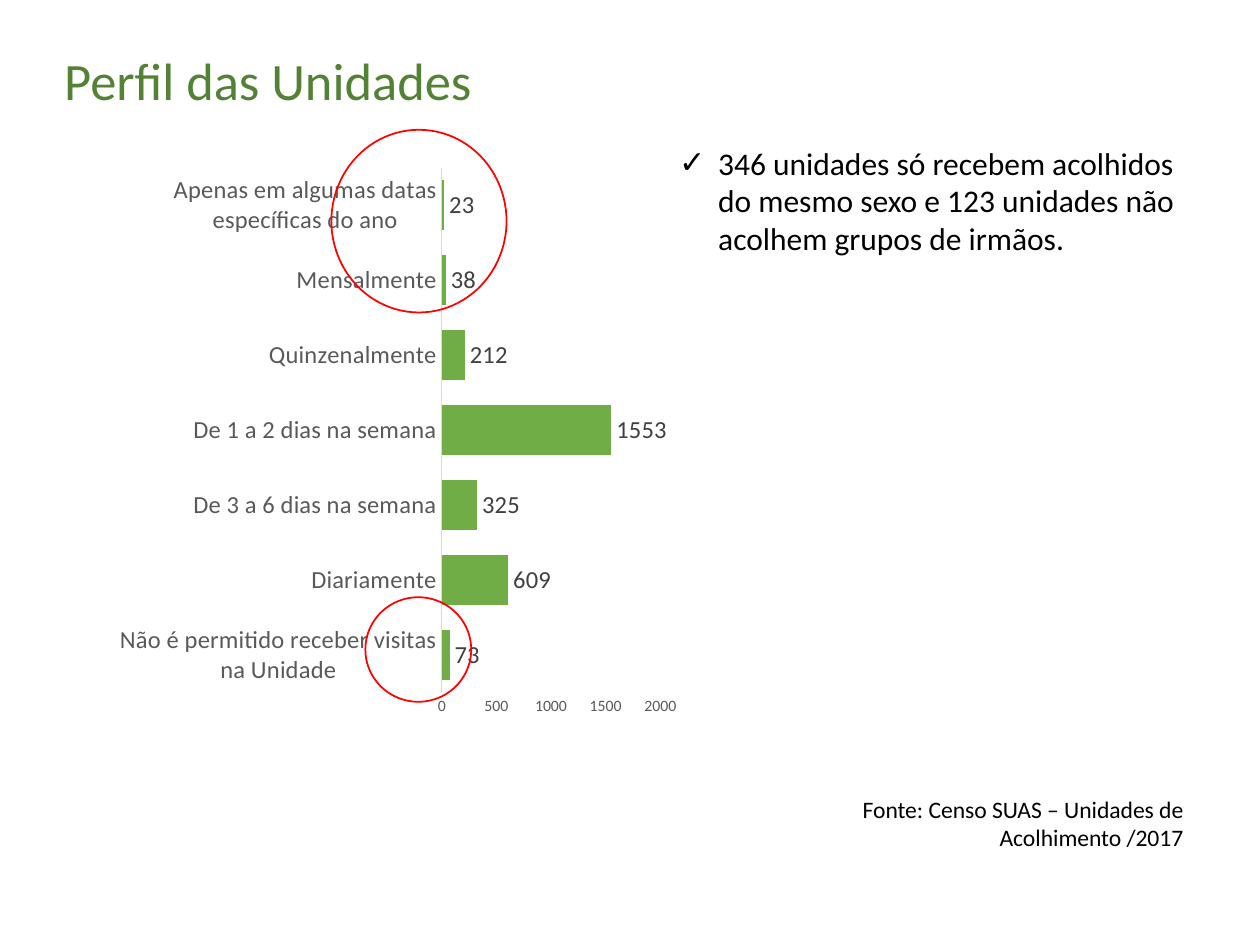
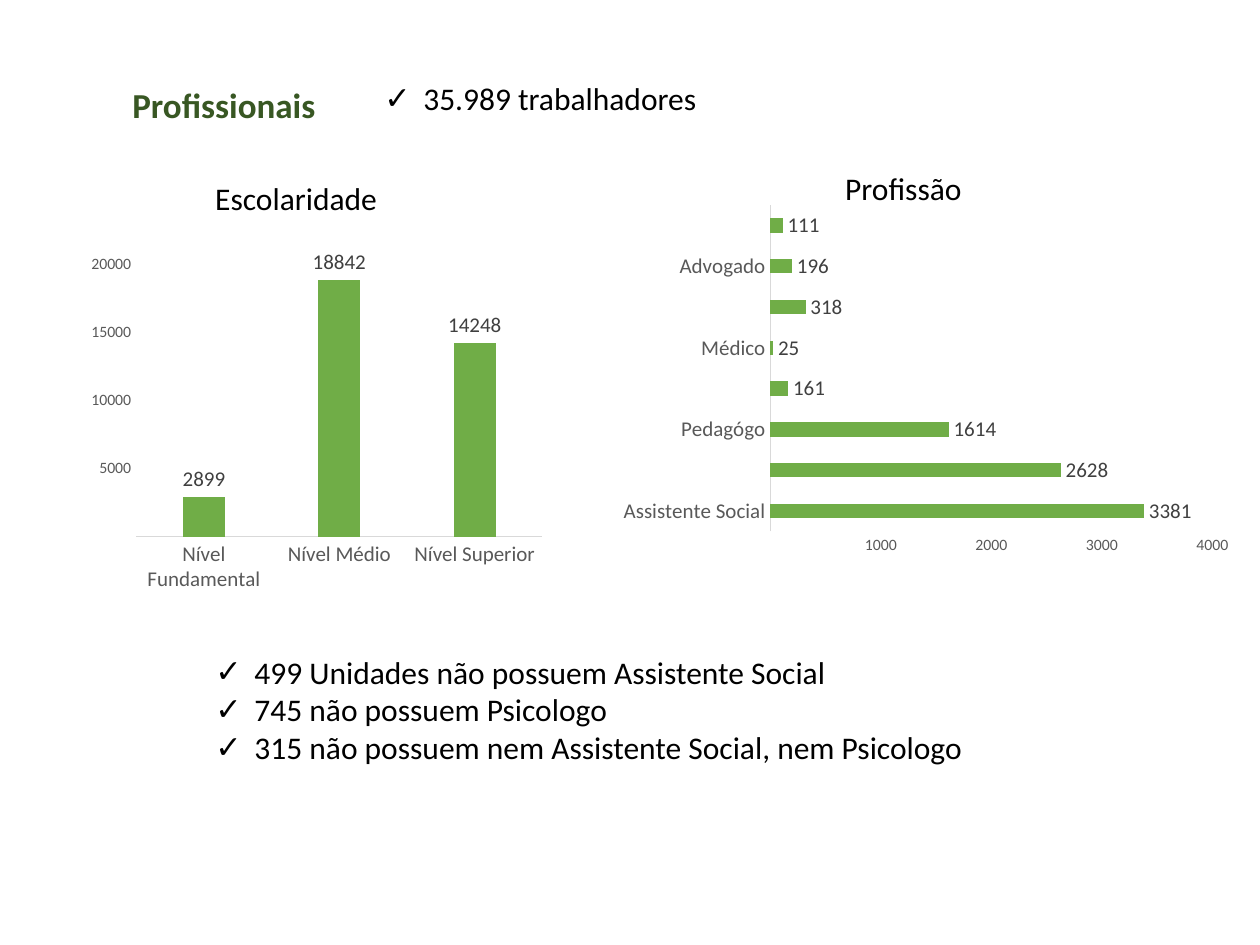
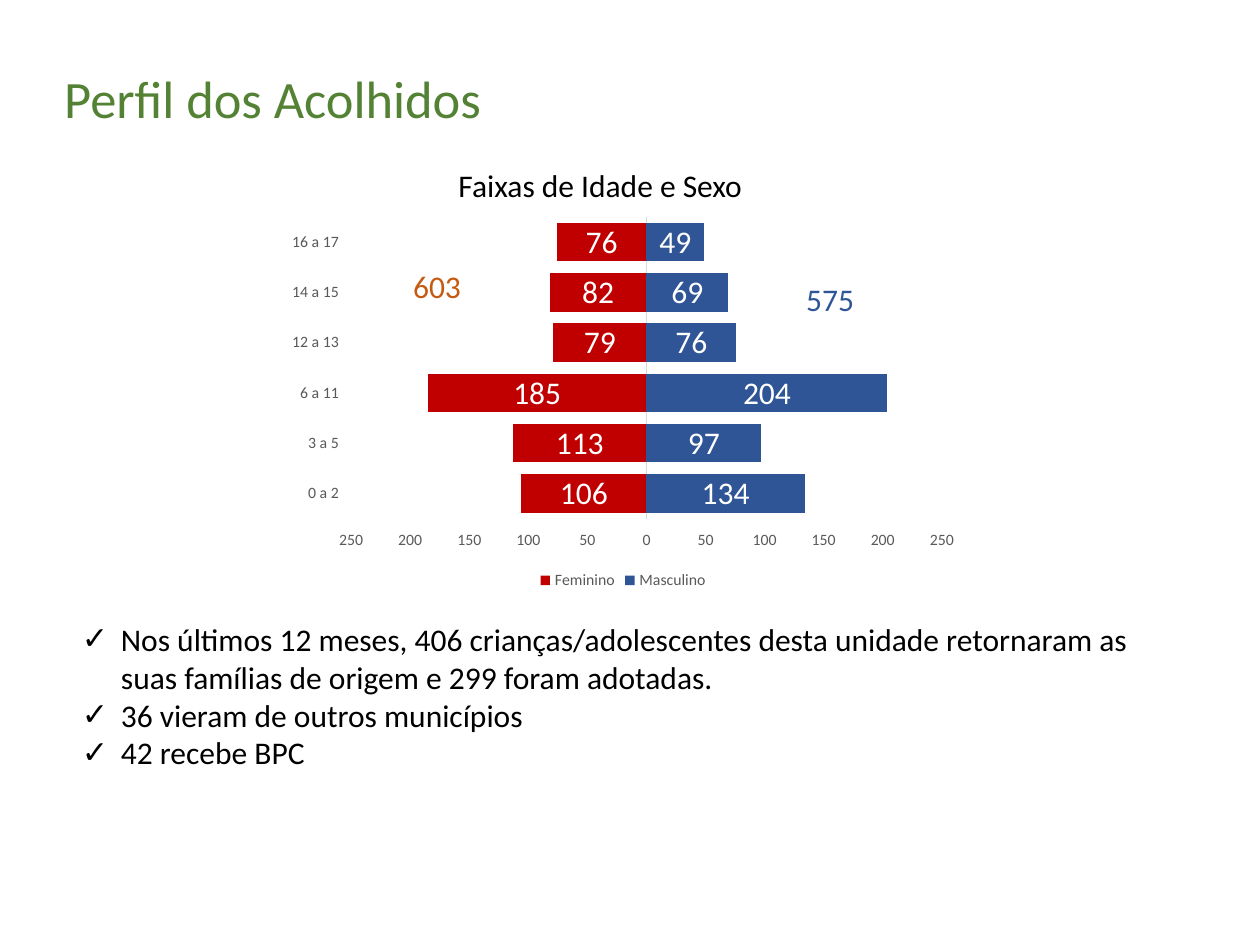
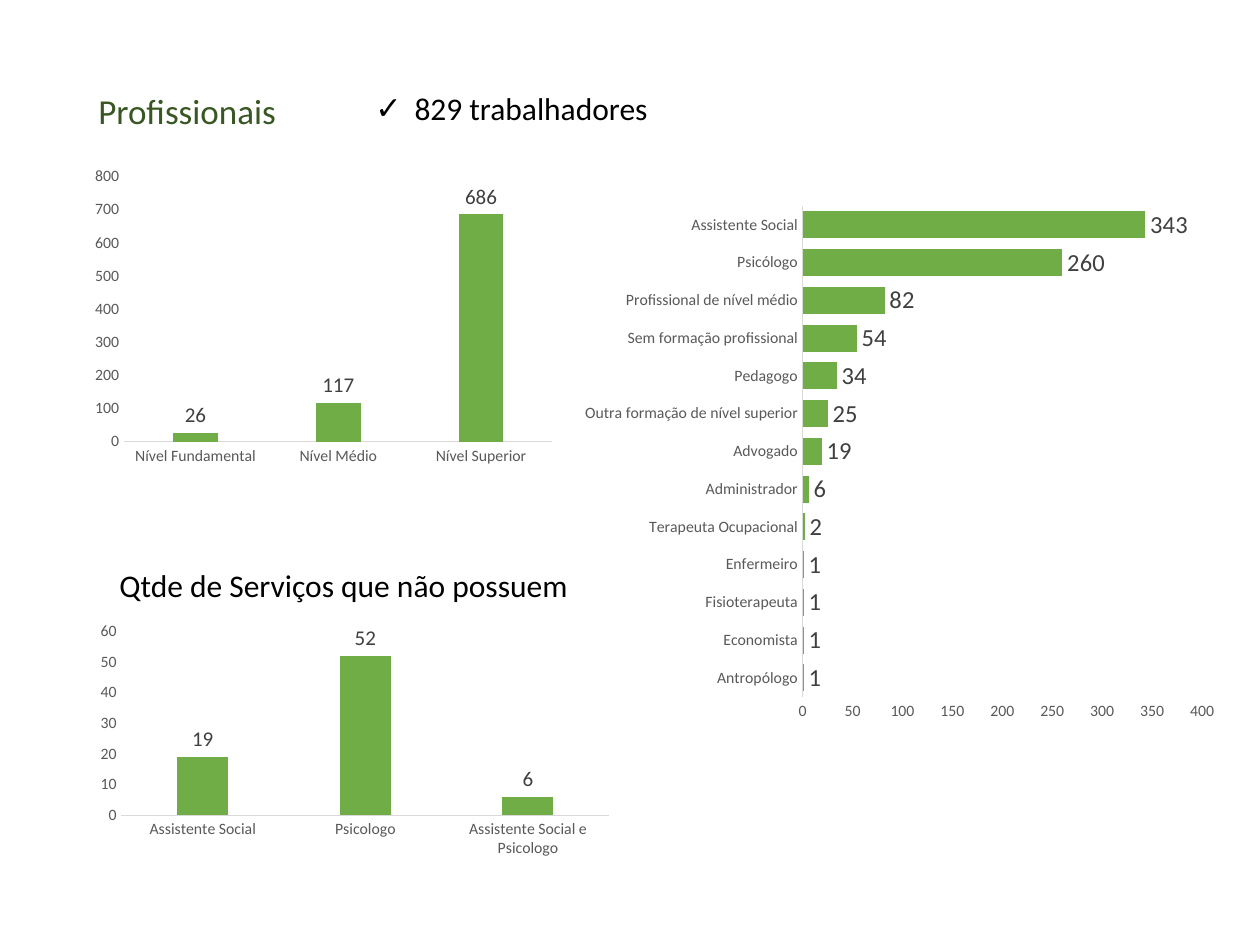
import pptx
import pptx.chart.data
import pptx.dml.color
import pptx.enum.chart
import pptx.enum.shapes
import pptx.enum.text
import pptx.oxml
import pptx.oxml.ns
import pptx.util

PX = 9144  # 100 px to the inch
FONT = "Calibri"
COLORS = {
    "title": "548235", "section": "385723", "text": "000000",
    "axis": "595959", "axis_line": "D9D9D9", "label": "404040",
    "bar": "70AD47", "female": "C00000", "male": "2F5597",
    "female_total": "C55A11", "highlight": "FF0000", "white": "FFFFFF",
}
LIST_INDENT = 31
PLAIN_NUMBER = "###0"
ZERO_HIDDEN = "####"
UNSIGNED = "###0;###0"
CHART_TYPE = pptx.enum.chart.XL_CHART_TYPE
COLUMNS, BARS = CHART_TYPE.COLUMN_CLUSTERED, CHART_TYPE.BAR_CLUSTERED
LABEL_POSITION = pptx.enum.chart.XL_LABEL_POSITION


def rgb(name):
    return pptx.dml.color.RGBColor.from_string(COLORS[name])


def emu(box):
    return [pptx.util.Emu(length * PX) for length in box]


def style_font(font, size, color, bold=False):
    font.name = FONT
    font.size = pptx.util.Pt(size)
    font.bold = bold
    font.color.rgb = rgb(color)


def add_check_bullet(paragraph):
    properties = paragraph._p.get_or_add_pPr()
    properties.set("marL", str(LIST_INDENT * PX))
    properties.set("indent", str(-LIST_INDENT * PX))
    bullet = pptx.oxml.parse_xml(
        f'<a:buChar {pptx.oxml.ns.nsdecls("a")} char="✓"/>')
    properties.append(bullet)


def fill_text(shape, box, lines, size, color, bold=False, checks=False, align="LEFT"):
    shape.left, shape.top, shape.width, shape.height = emu(box)
    frame = shape.text_frame
    frame.text = "\n".join(lines)
    frame.word_wrap = True
    frame.auto_size = pptx.enum.text.MSO_AUTO_SIZE.SHAPE_TO_FIT_TEXT
    frame.vertical_anchor = pptx.enum.text.MSO_ANCHOR.TOP
    for paragraph in frame.paragraphs:
        paragraph.space_before = pptx.util.Pt(0)
        paragraph.alignment = getattr(pptx.enum.text.PP_ALIGN, align)
        if checks:
            add_check_bullet(paragraph)
        for run in paragraph.runs:
            style_font(run.font, size, color, bold)


def add_note(slide, box, text, size=18, color="text", align="LEFT"):
    note = slide.shapes.add_textbox(*emu(box))
    fill_text(note, box, [text], size, color, align=align)


def add_title(slide, box, text, size=30, color="title", bold=False):
    fill_text(slide.shapes.title, box, [text], size, color, bold)


def add_checklist(slide, box, lines, placeholder=1):
    fill_text(slide.placeholders[placeholder], box, lines, 18, "text", checks=True)


def add_chart(slide, box, kind, categories, series, value_range, gap, overlap=0,
              number_format=PLAIN_NUMBER, axis_size=9, label_size=12,
              label_color="label", position=LABEL_POSITION.OUTSIDE_END):
    """Add a chart; series holds (name, values, color), value_range (min, max, step)."""
    data = pptx.chart.data.CategoryChartData(number_format=number_format)
    data.categories = categories
    for name, values, _ in series:
        data.add_series(name, values)
    chart = slide.shapes.add_chart(kind, *emu(box), data).chart
    chart.has_title = False
    chart.has_legend = False
    style_font(chart.font, 10, "text")

    category_axis, value_axis = chart.category_axis, chart.value_axis
    for axis, size in ((category_axis, axis_size), (value_axis, 9)):
        axis.has_major_gridlines = False
        axis.major_tick_mark = pptx.enum.chart.XL_TICK_MARK.NONE
        style_font(axis.tick_labels.font, size, "axis")
    category_axis.format.line.color.rgb = rgb("axis_line")
    category_axis.format.line.width = pptx.util.Pt(0.75)
    value_axis.format.line.fill.background()
    value_axis.minimum_scale, value_axis.maximum_scale, value_axis.major_unit = value_range
    value_axis.tick_labels.number_format = number_format
    value_axis.tick_labels.number_format_is_linked = False

    plot = chart.plots[0]
    plot.gap_width, plot.overlap = gap, overlap
    plot.vary_by_categories = False
    for bars, (_, _, color) in zip(plot.series, series):
        bars.invert_if_negative = False
        bars.format.fill.solid()
        bars.format.fill.fore_color.rgb = rgb(color)
        labels = bars.data_labels
        labels.show_value = True
        labels.position = position
        labels.number_format = number_format
        labels.number_format_is_linked = False
        style_font(labels.font, label_size, label_color)
    return chart


def add_count_chart(slide, box, kind, counts, top, step, gap=219, **options):
    """Add a one-series green chart of counts, given as {category: value}."""
    overlap = -27 if kind == COLUMNS else 0
    return add_chart(slide, box, kind, list(counts),
                     [("Series 1", list(counts.values()), "bar")],
                     (0, top, step), gap, overlap, **options)


def set_inner_plot(chart, x, y, w, h):
    sizes = "".join(f'<c:{tag} val="{value}"/>'
                    for tag, value in zip("xywh", (x, y, w, h)))
    layout = pptx.oxml.parse_xml(
        f'<c:layout {pptx.oxml.ns.nsdecls("c")}><c:manualLayout>'
        '<c:layoutTarget val="inner"/><c:xMode val="edge"/><c:yMode val="edge"/>'
        f'{sizes}</c:manualLayout></c:layout>')
    plot_area = chart._chartSpace.chart.plotArea
    for old in plot_area.findall(pptx.oxml.ns.qn("c:layout")):
        plot_area.remove(old)
    plot_area.insert(0, layout)


def add_highlight(slide, box):
    ring = slide.shapes.add_shape(pptx.enum.shapes.MSO_SHAPE.OVAL, *emu(box))
    ring.shadow.inherit = False
    ring.fill.background()
    ring.line.color.rgb = rgb("highlight")
    ring.line.width = pptx.util.Pt(1)


def add_visits(slide, box):
    """Chart of visit frequency with its lowest counts ringed."""
    left, top, _, _ = box
    visits = {
        "Não é permitido receber visitas na Unidade": 73, "Diariamente": 609,
        "De 3 a 6 dias na semana": 325, "De 1 a 2 dias na semana": 1553,
        "Quinzenalmente": 212, "Mensalmente": 38,
        "Apenas em algumas datas específicas do ano": 23,
    }
    add_count_chart(slide, box, BARS, visits, 2000, 500, gap=50,
                    axis_size=14, label_size=14)
    add_highlight(slide, (left + 177, top - 21, 139, 145))
    add_highlight(slide, (left + 204, top + 350, 84, 83))


def add_age_pyramid(slide, box):
    left, top, _, _ = box
    ages = ["0 a 2", "3 a 5", "6 a 11", "12 a 13", "14 a 15", "16 a 17"]
    sexes = [("Feminino", [-106, -113, -185, -79, -82, -76], "female"),
             ("Masculino", [134, 97, 204, 76, 69, 49], "male")]
    chart = add_chart(slide, box, CHART_TYPE.BAR_STACKED, ages, sexes, (-250, 250, 50),
                      30, 100, UNSIGNED, label_size=18, label_color="white",
                      position=LABEL_POSITION.CENTER)
    chart.category_axis.tick_label_position = pptx.enum.chart.XL_TICK_LABEL_POSITION.LOW
    chart.value_axis.major_tick_mark = pptx.enum.chart.XL_TICK_MARK.OUTSIDE
    chart.has_legend = True
    chart.legend.position = pptx.enum.chart.XL_LEGEND_POSITION.BOTTOM
    chart.legend.include_in_layout = False
    style_font(chart.legend.font, 9, "axis")
    add_note(slide, (left + 133, top - 39, 295, 40), "Faixas de Idade e Sexo")
    add_note(slide, (left + 97, top + 41, 72, 40), "603", color="female_total")
    add_note(slide, (left + 409, top + 51, 72, 40), "575", color="male")


def add_missing_staff(slide, box):
    left, top, _, _ = box
    missing = {"Assistente Social": 19, "Psicologo": 52, "Assistente Social e Psicologo": 6}
    chart = add_count_chart(slide, box, COLUMNS, missing, 60, 10)
    set_inner_plot(chart, 0.07, 0.08, 0.89, 0.69)
    add_note(slide, (left + 19, top - 40, 396, 40), "Qtde de Serviços que não possuem")


def build_units_profile(slide):
    add_title(slide, (41, 33, 852, 61), "Perfil das Unidades")
    add_visits(slide, (86, 124, 460, 453))
    add_note(slide, (661, 626, 288, 56),
             "Fonte: Censo SUAS – Unidades de Acolhimento /2017", 13.5, align="RIGHT")
    add_checklist(slide, (529, 109, 413, 131), [
        "346 unidades só recebem acolhidos do mesmo sexo e "
        "123 unidades não acolhem grupos de irmãos."])


def build_national_staff(slide):
    schooling = {"Nível Fundamental": 2899, "Nível Médio": 18842, "Nível Superior": 14248}
    professions = {
        "Assistente Social": 3381, "Psicólogo": 2628, "Pedagógo": 1614,
        "Enfermeiro": 161, "Médico": 25, "Administrador": 318, "Advogado": 196,
        "Fisiterapeuta/Terapia Ocupacional": 111,
    }
    add_title(slide, (95, 61, 400, 44), "Profissionais", 20, "section", bold=True)
    add_count_chart(slide, (65, 197, 373, 278), COLUMNS, schooling, 20000, 5000,
                    number_format=ZERO_HIDDEN, axis_size=12)
    add_count_chart(slide, (485, 157, 500, 289), BARS, professions, 4000, 1000, gap=182,
                    number_format=ZERO_HIDDEN, axis_size=12)
    add_checklist(slide, (295, 58, 287, 40), ["35.989 trabalhadores"])
    add_note(slide, (161, 137, 181, 40), "Escolaridade")
    add_note(slide, (661, 129, 181, 40), "Profissão")
    add_checklist(slide, (161, 513, 671, 101), [
        "499 Unidades não possuem Assistente Social",
        "745 não possuem Psicologo",
        "315 não possuem nem Assistente Social, nem Psicologo"], placeholder=2)


def build_residents_profile(slide):
    add_title(slide, (41, 47, 852, 61), "Perfil dos Acolhidos")
    add_age_pyramid(slide, (221, 166, 547, 306))
    add_checklist(slide, (55, 487, 892, 192), [
        "Nos últimos 12 meses, 406 crianças/adolescentes desta unidade retornaram "
        "as suas famílias de origem e 299 foram adotadas.",
        "36 vieram de outros municípios",
        "42 recebe BPC"])


def build_service_staff(slide):
    schooling = {"Nível Fundamental": 26, "Nível Médio": 117, "Nível Superior": 686}
    professions = {
        "Antropólogo": 1, "Economista": 1, "Fisioterapeuta": 1, "Enfermeiro": 1,
        "Terapeuta Ocupacional": 2, "Administrador": 6, "Advogado": 19,
        "Outra formação de nível superior": 25, "Pedagogo": 34,
        "Sem formação profissional": 54, "Profissional de nível médio": 82,
        "Psicólogo": 260, "Assistente Social": 343,
    }
    add_title(slide, (68, 66, 400, 44), "Profissionais", 20, "section")
    add_checklist(slide, (288, 66, 245, 40), ["829 trabalhadores"])
    add_count_chart(slide, (68, 128, 378, 246), COLUMNS, schooling, 800, 100)
    add_count_chart(slide, (454, 155, 520, 425), BARS, professions, 400, 50, gap=40,
                    label_size=14)
    add_missing_staff(slide, (66, 484, 435, 212))


def main():
    deck = pptx.Presentation()
    deck.slide_width, deck.slide_height = emu((1000, 750))
    one_list, two_lists = deck.slide_layouts[1], deck.slide_layouts[3]
    for build, layout in ((build_units_profile, one_list),
                          (build_national_staff, two_lists),
                          (build_residents_profile, one_list),
                          (build_service_staff, one_list)):
        build(deck.slides.add_slide(layout))
    deck.save("out.pptx")


if __name__ == "__main__":
    main()
